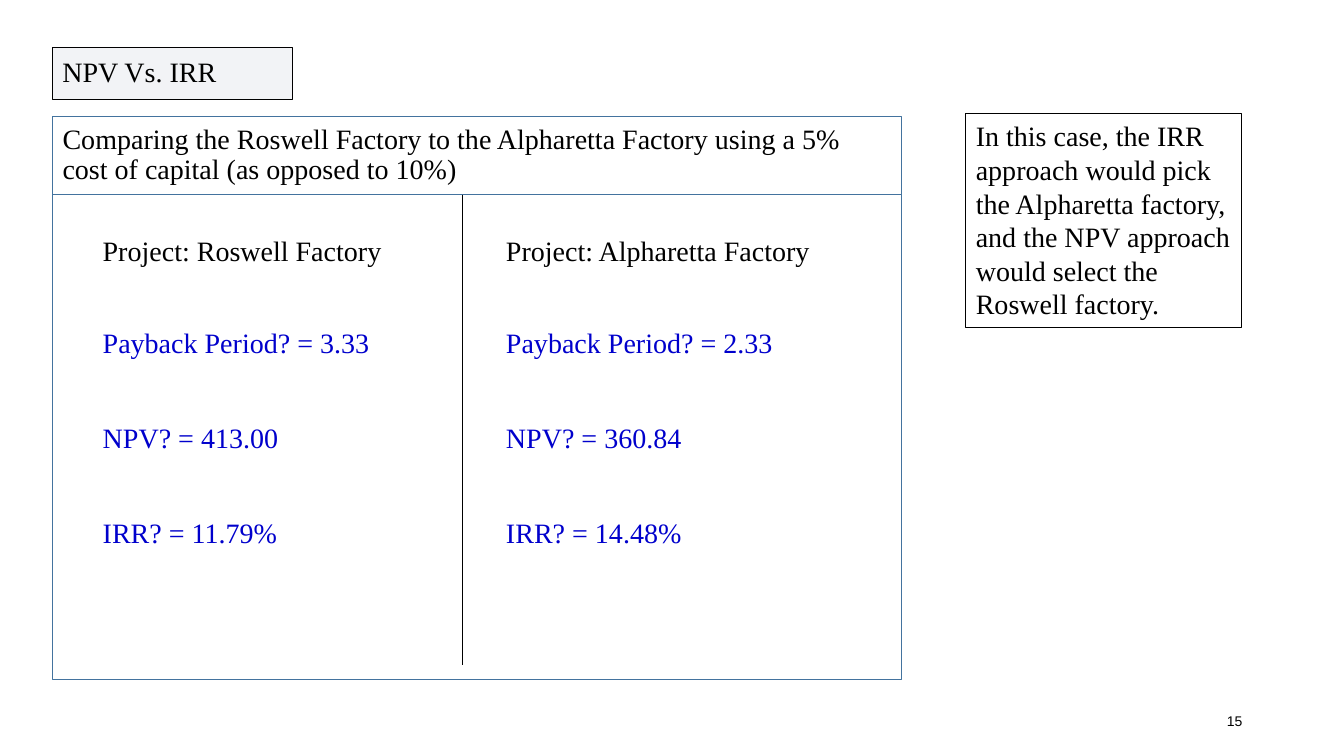
from lxml import etree
from pptx import Presentation
from pptx.dml.color import RGBColor
from pptx.enum.shapes import MSO_CONNECTOR, MSO_SHAPE
from pptx.enum.text import MSO_ANCHOR, MSO_AUTO_SIZE, PP_ALIGN
from pptx.oxml.ns import qn
from pptx.util import Inches, Pt

RECT = MSO_SHAPE.RECTANGLE
LEFT, RIGHT = PP_ALIGN.LEFT, PP_ALIGN.RIGHT
TOP, MIDDLE = MSO_ANCHOR.TOP, MSO_ANCHOR.MIDDLE
BLACK = RGBColor(0x00, 0x00, 0x00)
BLUE = RGBColor(0x00, 0x00, 0xCC)
STEEL = RGBColor(0x43, 0x73, 0x9E)
NAVY = RGBColor(0x00, 0x20, 0x60)

# Content
TAG = "NPV Vs. IRR"
TITLE = ("Comparing the Roswell Factory to the Alpharetta Factory "
         "using a 5% cost of capital (as opposed to 10%)")
PROJECTS = [
    ("Project: Roswell Factory",
     ["Payback Period? = 3.33", "NPV? = 413.00", "IRR? = 11.79%"]),
    ("Project: Alpharetta Factory",
     ["Payback Period? = 2.33", "NPV? = 360.84", "IRR? = 14.48%"]),
]
CONCLUSION = ("In this case, the IRR approach would pick the Alpharetta factory, "
              "and the NPV approach would select the Roswell factory.")
PAGE = "15"

# Layout in inches
PANEL_X, PANEL_W = 0.52, 8.42
TITLE_Y, TITLE_H = 1.16, 0.77
PANEL_Y, PANEL_H = TITLE_Y + TITLE_H, 4.81
COLUMN_X, COLUMN_STEP = 0.92, 4
DIVIDER_X, DIVIDER_END = 4.59, 6.6
METRIC_GAP = Pt(44)


def place(shape, x, y, w, h):
    shape.left, shape.top = Inches(x), Inches(y)
    shape.width, shape.height = Inches(w), Inches(h)


def write(shape, lines, color=BLACK, size=20, font="Times New Roman",
          align=LEFT, anchor=TOP, spacing=None, gap=Pt(0)):
    tf = shape.text_frame
    tf.text = "\n".join(lines)
    tf.word_wrap = True
    tf.auto_size = MSO_AUTO_SIZE.NONE
    tf.vertical_anchor = anchor
    for i, p in enumerate(tf.paragraphs):
        p.alignment = align
        p.line_spacing = spacing
        p.space_before = gap if i else Pt(0)
        for r in p.runs:
            r.font.name, r.font.size = font, Pt(size)
            r.font.color.rgb = color


def outline(shape, color, width=0.75):
    shape.line.color.rgb = color
    shape.line.width = Pt(width)


def add_box(s, x, y, w, h, color, width=0.75):
    box = s.shapes.add_shape(RECT, Inches(x), Inches(y), Inches(w), Inches(h))
    box.shadow.inherit = False
    box.fill.background()
    outline(box, color, width)
    return box


def add_text(s, x, y, w, h, lines, **style):
    box = s.shapes.add_textbox(Inches(x), Inches(y), Inches(w), Inches(h))
    write(box, lines, **style)


prs = Presentation()
prs.slide_width, prs.slide_height = Inches(13.33), Inches(7.5)
s = prs.slides.add_slide(prs.slide_layouts[5])

# Title
title = s.shapes.title
place(title, PANEL_X, TITLE_Y, PANEL_W, TITLE_H)
outline(title, STEEL)
write(title, [TITLE], anchor=MIDDLE, spacing=0.9)

# Comparison panel and divider
add_box(s, PANEL_X, PANEL_Y, PANEL_W, PANEL_H, STEEL, 1)
divider = s.shapes.add_connector(MSO_CONNECTOR.STRAIGHT, Inches(DIVIDER_X), Inches(PANEL_Y),
                                 Inches(DIVIDER_X), Inches(DIVIDER_END))
outline(divider, BLACK)
etree.SubElement(divider._element.spPr, qn("a:effectLst"))

# One column per project
for i, (project, metrics) in enumerate(PROJECTS):
    x = COLUMN_X + i * COLUMN_STEP
    add_text(s, x, 2.27, 4, 0.44, [project])
    add_text(s, x, 3.18, 3.58, 2.46, metrics, color=BLUE, gap=METRIC_GAP)

# Topic tag with a faint navy tint
tag = add_box(s, PANEL_X, 0.47, 2.38, 0.52, BLACK)
tag.fill.solid()
tag.fill.fore_color.rgb = NAVY
tint = tag._element.spPr.find(qn("a:solidFill"))[0]
etree.SubElement(tint, qn("a:alpha"), val="5000")
write(tag, [TAG], anchor=MIDDLE, spacing=0.9)

# Conclusion
write(add_box(s, 9.58, 1.13, 2.73, 2.12, BLACK), [CONCLUSION])

# Page number
add_text(s, 9.42, 6.95, 3, 0.4, [PAGE], size=10, font="Arial", align=RIGHT, anchor=MIDDLE)

prs.save("out.pptx")
